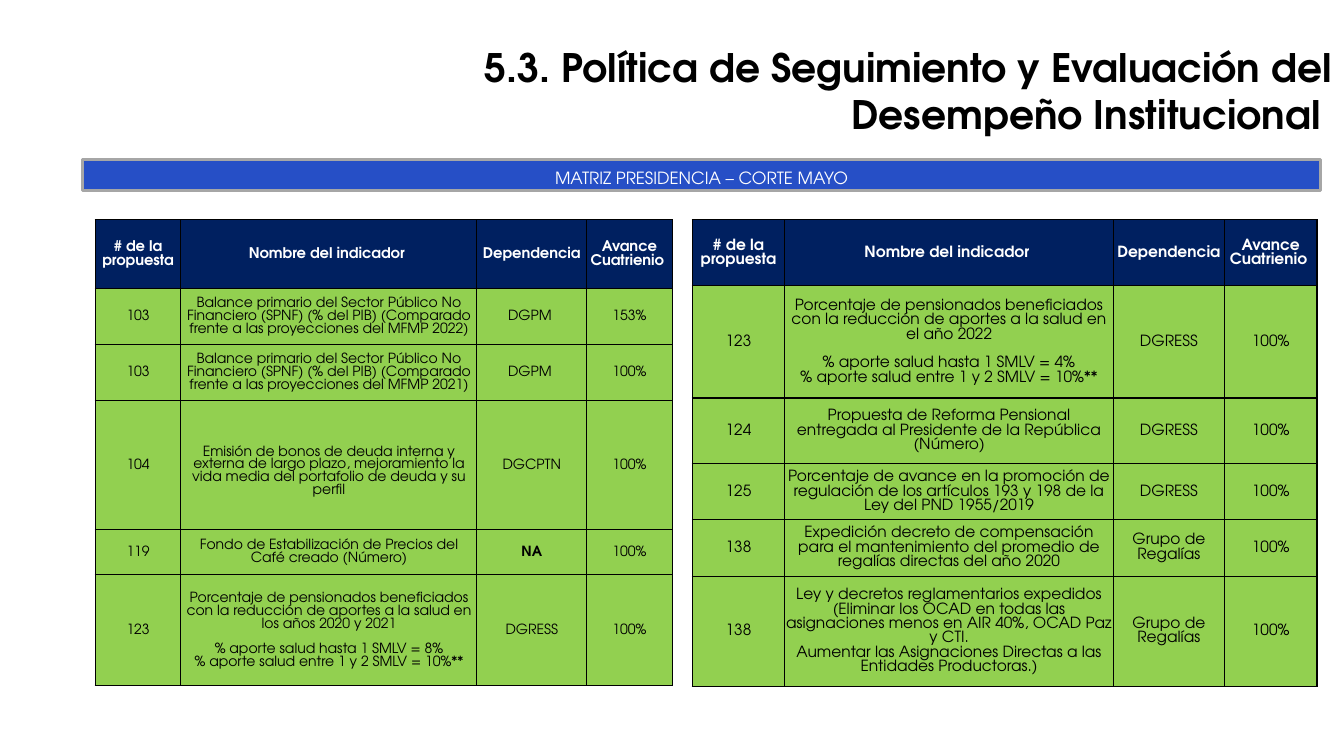
from lxml.etree import SubElement
from pptx import Presentation
from pptx.dml.color import RGBColor
from pptx.enum.shapes import MSO_SHAPE
from pptx.enum.text import MSO_ANCHOR, MSO_AUTO_SIZE, PP_ALIGN
from pptx.oxml.ns import qn
from pptx.util import Inches, Pt

FONT = "TeX Gyre Adventor"
BLACK = RGBColor(0x00, 0x00, 0x00)
WHITE = RGBColor(0xFF, 0xFF, 0xFF)
NAVY = RGBColor(0x00, 0x20, 0x60)
GREEN = RGBColor(0x92, 0xD0, 0x50)
BLUE = RGBColor(0x26, 0x4F, 0xC6)
GREY = RGBColor(0xA6, 0xA6, 0xA6)
WIDTH, HEIGHT = Inches(13.33), Inches(7.5)

HEADER = ("# de la propuesta", "Nombre del indicador ", "Dependencia", "Avance Cuatrienio ")
BALANCE = ("Balance primario del Sector Público No Financiero (SPNF) (% del PIB) "
           "(Comparado frente a las proyecciones del MFMP {})")
PENSION = ("Porcentaje de pensionados beneficiados con la reducción de aportes a la salud en {}\n\n"
           "% aporte salud hasta 1 SMLV = {}\n% aporte salud entre 1 y 2 SMLV = 10%**")
LEFT_ROWS = [
    HEADER,
    ("103", BALANCE.format(2022), "DGPM ", "153%"),
    ("103", BALANCE.format(2021), "DGPM ", "100%"),
    ("104", "Emisión de bonos de deuda interna y externa de largo plazo, mejoramiento la vida "
            "media del portafolio de deuda y su perfil", "DGCPTN", "100%"),
    ("119", "Fondo de Estabilización de Precios del Café creado (Número)", "NA", "100%"),
    ("123", PENSION.format("los años 2020 y 2021", "8%"), "DGRESS", "100%"),
]
RIGHT_ROWS = [
    HEADER,
    ("123", PENSION.format("el año 2022", "4%"), "DGRESS", "100%"),
    ("124", "Propuesta de Reforma Pensional entregada al Presidente de la República (Número)",
     "DGRESS", "100%"),
    ("125", "Porcentaje de avance en la promoción de regulación de los artículos 193 y 198 de la "
            "Ley del PND 1955/2019", "DGRESS", "100%"),
    ("138", "Expedición decreto de compensación para el mantenimiento del promedio de "
            "regalías directas del año 2020", "Grupo de Regalías", "100%"),
    ("138", "Ley y decretos reglamentarios expedidos (Eliminar los OCAD en todas las asignaciones "
            "menos en AIR 40%, OCAD Paz y CTI.\nAumentar las Asignaciones Directas a las "
            "Entidades Productoras.)", "Grupo de Regalías", "100%"),
]


def share(x, y, w, h):
    """Turn percentages of the slide into a box."""
    return tuple(int(part * side / 100) for part, side in zip((x, y, w, h), (WIDTH, HEIGHT) * 2))


def write(tf, text, size, color=BLACK, bold=False, align=PP_ALIGN.CENTER, spacing=1.0):
    """Write one paragraph per line; an empty line becomes space before the next."""
    p, gap = tf.paragraphs[0], False
    for i, line in enumerate(text.split("\n")):
        if not line:
            gap = True
            continue
        p = tf.add_paragraph() if i else p
        p.alignment, p.line_spacing = align, spacing
        if gap:
            p.space_before, gap = Pt(round(size * 0.92)), False
        r = p.add_run()
        r.text = line
        r.font.name, r.font.size, r.font.bold = FONT, Pt(size), bold
        r.font.color.rgb = color


def add_borders(cell):
    """Put a thin black line on all four sides of a cell."""
    props = cell._tc.get_or_add_tcPr()
    for i, side in enumerate(("lnL", "lnR", "lnT", "lnB")):
        ln = props.makeelement(qn(f"a:{side}"), {"w": str(Pt(1))})
        fill = SubElement(ln, qn("a:solidFill"))
        SubElement(fill, qn("a:srgbClr"), val=str(BLACK))
        props.insert(i, ln)


def add_title(slide, box):
    """Set the right-aligned heading."""
    sp = slide.shapes.title
    sp.left, sp.top, sp.width, sp.height = box
    tf = sp.text_frame
    tf.word_wrap, tf.auto_size = True, MSO_AUTO_SIZE.NONE
    tf.vertical_anchor = MSO_ANCHOR.MIDDLE
    write(tf, "5.3. Política de Seguimiento y Evaluación del Desempeño Institucional ", 28,
          bold=True, align=PP_ALIGN.RIGHT)


def add_band(slide, box):
    """Draw the blue band that names the matrix."""
    sp = slide.shapes.add_shape(MSO_SHAPE.RECTANGLE, *box)
    sp.shadow.inherit = False
    sp.fill.solid()
    sp.fill.fore_color.rgb = BLUE
    sp.line.color.rgb, sp.line.width = GREY, Pt(2.25)
    sp.text_frame.vertical_anchor = MSO_ANCHOR.TOP
    write(sp.text_frame, "MATRIZ PRESIDENCIA – CORTE MAYO", 12, WHITE, spacing=1.15)


def add_matrix(slide, box, rows, columns, heights, header_size, size):
    """Fill the box with an indicator table whose columns and rows share it by weight."""
    table = slide.shapes.add_table(len(rows), len(columns), *box).table
    for column, weight in zip(table.columns, columns):
        column.width = int(box[2] * weight / sum(columns))
    for row, weight in zip(table.rows, heights):
        row.height = int(box[3] * weight / sum(heights))
    for i, row in enumerate(rows):
        for j, text in enumerate(row):
            cell, head = table.cell(i, j), i == 0
            side = 0 if row[0] == "138" else Inches(0.01)
            cell.margin_left = cell.margin_right = side
            cell.margin_top = Inches(0.13) if text.startswith("Emisión") else side
            cell.margin_bottom = 0
            cell.vertical_anchor = MSO_ANCHOR.MIDDLE
            cell.fill.solid()
            cell.fill.fore_color.rgb = NAVY if head else GREEN
            add_borders(cell)
            write(cell.text_frame, text, header_size if head else size,
                  WHITE if head else BLACK, bold=head or text == "NA")


def main():
    """Build and save the slide."""
    prs = Presentation()
    prs.slide_width, prs.slide_height = WIDTH, HEIGHT
    slide = prs.slides.add_slide(prs.slide_layouts[5])
    add_matrix(slide, share(7.09, 29.07, 42.93, 61.6), LEFT_ROWS,
               (0.85, 2.94, 1.09, 0.85), (0.68, 0.56, 0.56, 1.28, 0.45, 1.1), 10.5, 10)
    add_matrix(slide, share(51.5, 29.07, 46.5, 61.8), RIGHT_ROWS,
               (0.92, 3.26, 1.1, 0.92), (0.65, 1.12, 0.65, 0.56, 0.56, 1.1), 11, 11)
    add_band(slide, share(6.15, 21.1, 92.12, 4.13))
    add_title(slide, share(18.65, 8.4, 81.17, 7.2))
    prs.save("out.pptx")


if __name__ == "__main__":
    main()
